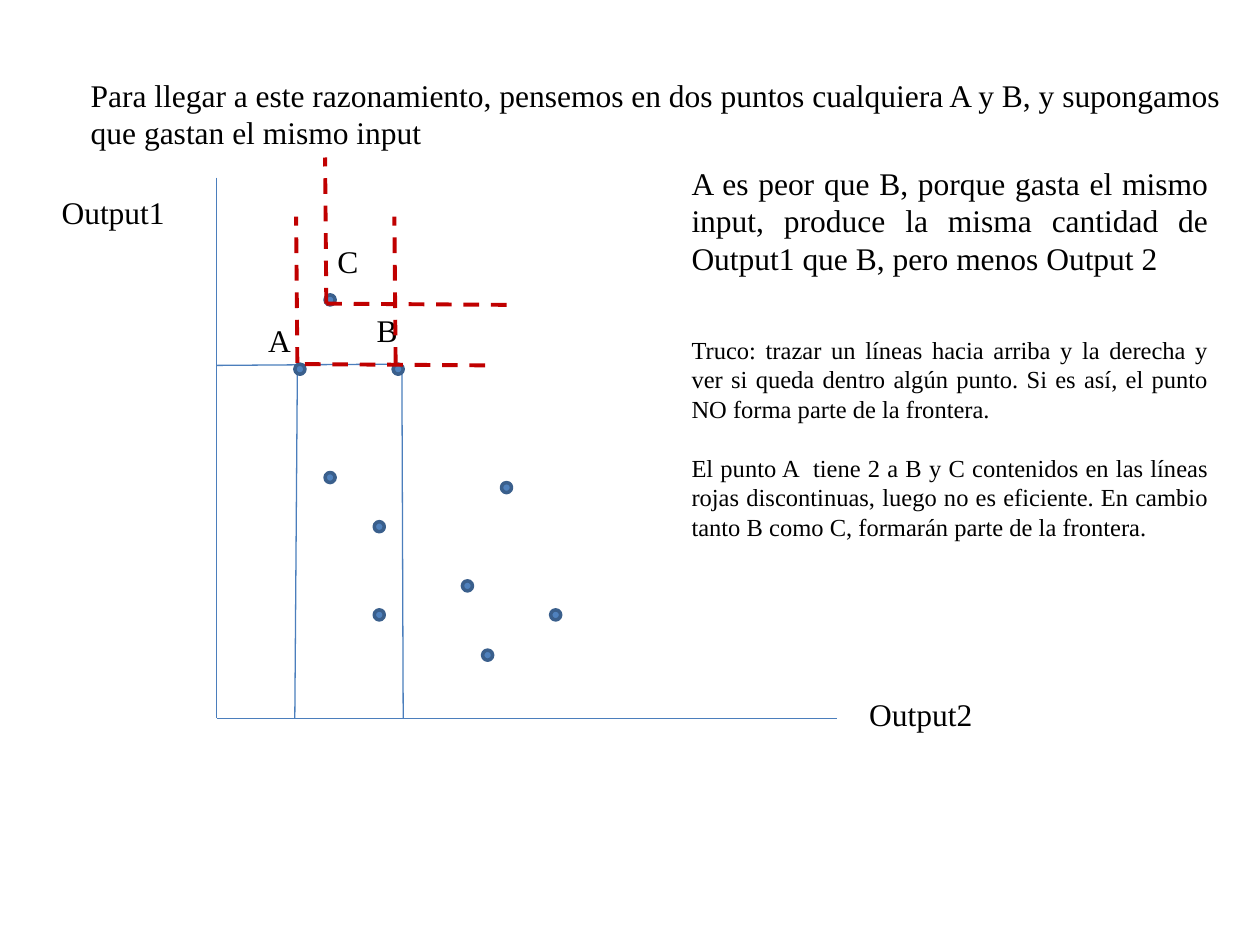
from lxml import etree
from pptx import Presentation
from pptx.dml.color import RGBColor
from pptx.enum.dml import MSO_LINE
from pptx.enum.shapes import MSO_CONNECTOR, MSO_SHAPE
from pptx.enum.text import MSO_ANCHOR, MSO_AUTO_SIZE, PP_ALIGN
from pptx.oxml.ns import qn
from pptx.util import Pt

PX = 9144  # 100 px to the inch
FONT = "Times New Roman"
BLACK = RGBColor(0x00, 0x00, 0x00)
BLUE = RGBColor(0x4F, 0x81, 0xBD)
NAVY = RGBColor(0x3A, 0x5F, 0x8C)
AXIS = RGBColor(0x4B, 0x7E, 0xBC)
RED = RGBColor(0xC0, 0x00, 0x00)
LEFT, JUST = PP_ALIGN.LEFT, PP_ALIGN.JUSTIFY
OVAL, STRAIGHT = MSO_SHAPE.OVAL, MSO_CONNECTOR.STRAIGHT
DASH = MSO_LINE.DASH
TOP, FIXED = MSO_ANCHOR.TOP, MSO_AUTO_SIZE.NONE

HEAD = ("Para llegar a este razonamiento, pensemos en dos puntos cualquiera "
        "A y B, y supongamos que gastan el mismo input")
# text, size in points, space before in points
NOTES = [
    ("A es peor que B, porque gasta el mismo input, produce la misma cantidad "
     "de Output1 que B, pero menos Output 2", 18, 0),
    ("Truco: trazar un líneas hacia arriba y la derecha y ver si queda dentro "
     "algún punto. Si es así, el punto NO forma parte de la frontera.", 14, 33),
    ("El punto A  tiene 2 a B y C contenidos en las líneas rojas discontinuas, "
     "luego no es eficiente. En cambio tanto B como C, formarán parte de la "
     "frontera.", 14, 17),
]

# All plot positions are px from the top of the vertical axis
DOTS = [(90, 97), (66, 152), (144, 152), (90, 238), (129, 347),
        (199, 324), (230, 246), (269, 347), (129, 277), (215, 379)]
LABELS = [("Output1", -133, 7, 125), ("Output2", 508, 406, 117),
          ("A", 31, 109, 70), ("B", 117, 101, 55), ("C", 86, 46, 70)]
GUIDES = [(0, 149, 142, 148), (147, 155, 148, 429), (64, 155, 62, 429)]
RISES = [(87, 100), (64, 147), (142, 147)]
RUNS = [(87, 100), (70, 148)]
DOT = 8


def style(para, size, align=LEFT):
    para.alignment = align
    for run in para.runs:
        run.font.name = FONT
        run.font.size = Pt(size)
        run.font.color.rgb = BLACK


def add_text(slide, box, items, align=LEFT):
    frame = slide.shapes.add_textbox(*(v * PX for v in box)).text_frame
    frame.word_wrap = True
    for i, (text, size, gap) in enumerate(items):
        para = frame.add_paragraph() if i else frame.paragraphs[0]
        para.text = text
        para.space_before = Pt(gap)
        style(para, size, align)


def add_line(slide, ends, color, width, dash=None):
    line = slide.shapes.add_connector(STRAIGHT, *(v * PX for v in ends))
    line.line.color.rgb = color
    line.line.width = Pt(width)
    if dash:
        line.line.dash_style = dash
    etree.SubElement(line._element.spPr, qn("a:effectLst"))


def add_dot(slide, x, y):
    dot = slide.shapes.add_shape(OVAL, (x - DOT // 2) * PX, (y - DOT // 2) * PX,
                                 DOT * PX, DOT * PX)
    dot.shadow.inherit = False
    dot.fill.solid()
    dot.fill.fore_color.rgb = BLUE
    dot.line.color.rgb = NAVY
    dot.line.width = Pt(2)


def add_head(slide, box):
    title = slide.shapes.title
    title.left, title.top, title.width, title.height = (v * PX for v in box)
    frame = title.text_frame
    frame.text = HEAD
    frame.auto_size = FIXED
    frame.vertical_anchor = TOP
    style(frame.paragraphs[0], 18)


def add_plot(slide, box):
    left, top, wide, high = box

    def place(x1, y1, x2, y2):
        return left + x1, top + y1, left + x2, top + y2

    axes = [(0, 0, 0, high), (0, high, wide, high)]
    for ends in axes + GUIDES:
        add_line(slide, place(*ends), AXIS, 0.75)
    for x, y in DOTS:
        add_dot(slide, left + x, top + y)
    for text, x, y, width in LABELS:
        add_text(slide, (left + x, top + y, width, 40), [(text, 18, 0)])
    reds = [(x, y, x - 1, y - 116) for x, y in RISES]
    reds += [(x, y, x + 147, y + 1) for x, y in RUNS]
    for ends in reds:
        add_line(slide, place(*ends), RED, 2.25, DASH)


def main():
    deck = Presentation()
    deck.slide_width, deck.slide_height = 1000 * PX, 750 * PX
    slide = deck.slides.add_slide(deck.slide_layouts[5])
    add_head(slide, (62, 55, 922, 71))
    add_plot(slide, (172, 141, 492, 429))
    add_text(slide, (539, 125, 430, 313), NOTES, JUST)
    deck.save("out.pptx")


if __name__ == "__main__":
    main()
